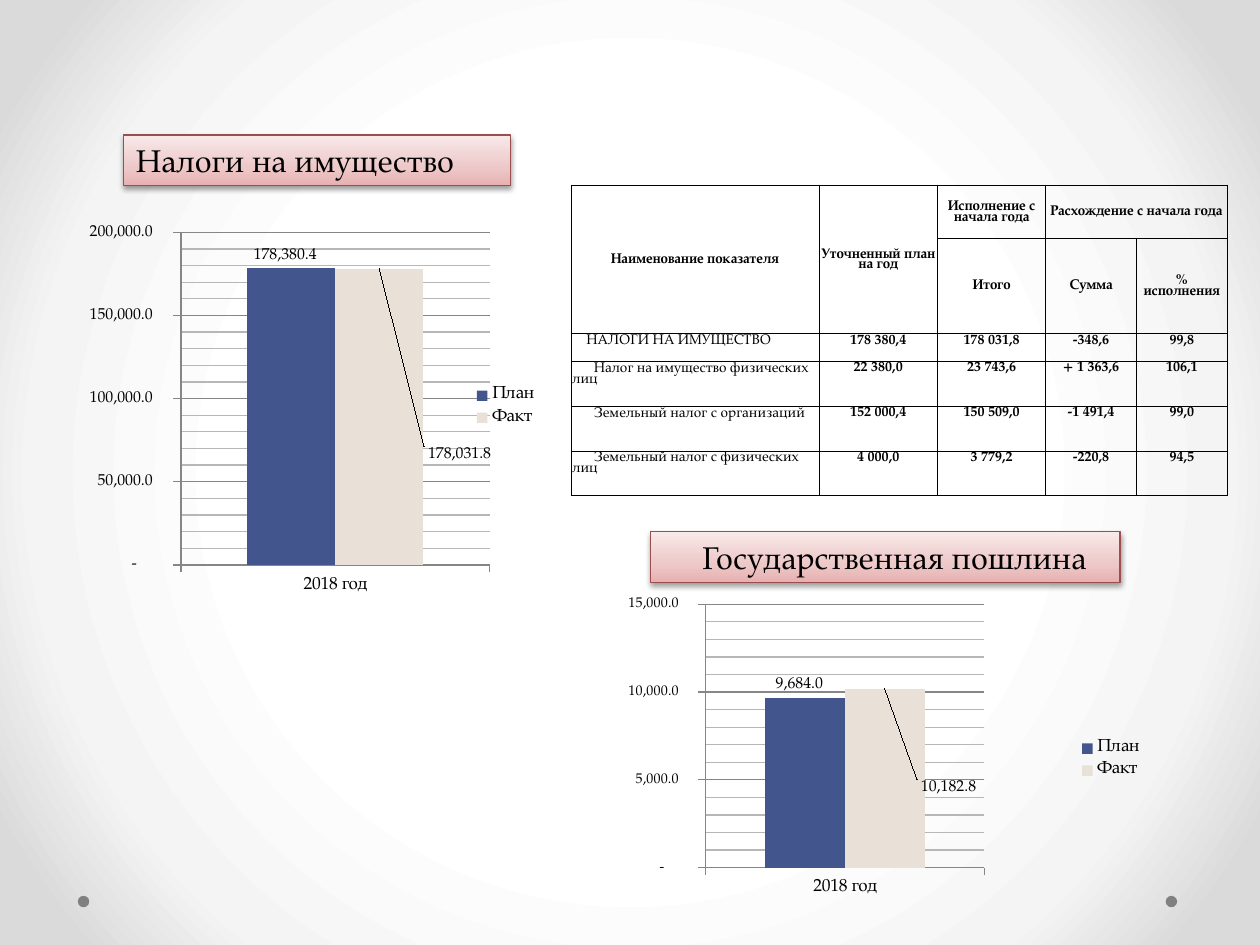
from dataclasses import dataclass
from typing import Any

from lxml.etree import SubElement
from pptx import Presentation
from pptx.chart.data import CategoryChartData
from pptx.dml.color import RGBColor
from pptx.enum.chart import XL_CHART_TYPE, XL_LABEL_POSITION, XL_LEGEND_POSITION, XL_TICK_MARK
from pptx.enum.shapes import MSO_SHAPE
from pptx.enum.text import MSO_ANCHOR, MSO_AUTO_SIZE, PP_ALIGN
from pptx.oxml import parse_xml
from pptx.oxml.ns import nsdecls, qn
from pptx.util import Cm, Pt


@dataclass(frozen=True)
class Theme:
    font: str = "TeX Gyre Pagella"
    text: str = "000000"
    dot: str = "808080"
    heading_line: str = "9A4E4E"
    axis: str = "868686"
    minor_grid: str = "B7B7B7"
    series: tuple = ("42568D", "E9E0D7")
    heading_stops: tuple = ((0, "E8B0B0"), (35, "EDC8C8"), (100, "F9E9E9"))
    back_stops: tuple = ((50, "FFFFFF"), (76, "F4F4F4"), (92, "DADADA"))
    heading_pt: float = 18
    category_pt: float = 10
    label_pt: float = 9
    table_pt: float = 8


@dataclass(frozen=True)
class BarChart:
    box: tuple          # left, top, width, height in cm
    plot: tuple         # inner plot area, as fractions of the chart
    values: tuple       # plan, fact
    top: float
    step: float
    axis_pt: float
    fact_shift: tuple   # offset of the fact label, as fractions


@dataclass(frozen=True)
class Row:
    name: str
    indent: float
    figures: tuple


T = Theme()
NUMBER = '_-* #,##0.0_р_._-;\\-* #,##0.0_р_._-;_-* "-"??_р_._-;_-@_-'

CHARTS = (
    BarChart((0.89, 4.11, 10.21, 8.18), (0.27, 0.07, 0.61, 0.82),
             (178380.4, 178031.8), 200000, 50000, 9, (0.17, 0.49)),
    BarChart((12.5, 11.91, 10.8, 6.81), (0.16, 0.04, 0.52, 0.78),
             (9684.0, 10182.8), 15000, 5000, 8, (0.13, 0.33)),
)
COLS = (5.0, 2.39, 2.18, 1.83, 1.83)
ROWS = (1.07, 1.93, 0.56, 0.91, 0.89, 0.89)
HEADS = {
    (0, 0): "Наименование показателя", (0, 1): "Уточненный план на год",
    (0, 2): "Исполнение с начала года", (0, 3): "Расхождение с начала года",
    (1, 2): "Итого", (1, 3): "Сумма", (1, 4): "% исполнения",
}
MERGES = (((0, 0), (1, 0)), ((0, 1), (1, 1)), ((0, 3), (0, 4)))
BODY = (
    Row("НАЛОГИ НА ИМУЩЕСТВО", 0.28, ("178 380,4", "178 031,8", "-348,6", "99,8")),
    Row("Налог на имущество физических лиц", 0.43, ("22 380,0", "23 743,6", "+ 1 363,6", "106,1")),
    Row("Земельный налог с организаций", 0.43, ("152 000,4", "150 509,0", "-1 491,4", "99,0")),
    Row("Земельный налог с физических лиц", 0.43, ("4 000,0", "3 779,2", "-220,8", "94,5")),
)


def rgb(color: str) -> RGBColor:
    return RGBColor.from_string(color)


def set_gradient(fill: Any, parent: Any, stops: tuple, direction: str) -> None:
    fill.solid()
    gs = "".join(f'<a:gs pos="{pos * 1000}"><a:srgbClr val="{c}"/></a:gs>' for pos, c in stops)
    grad = parse_xml(f'<a:gradFill {nsdecls("a")} rotWithShape="1">'
                     f'<a:gsLst>{gs}</a:gsLst>{direction}</a:gradFill>')
    parent.replace(parent.find(qn("a:solidFill")), grad)


def add_run(p: Any, text: str, size: float, bold: bool = False) -> None:
    r = p.add_run()
    r.text = text
    r.font.name, r.font.size, r.font.bold = T.font, Pt(size), bold
    r.font.color.rgb = rgb(T.text)


def format_heading(sp: Any, text: str, box: tuple, margin: float) -> None:
    sp.left, sp.top, sp.width, sp.height = map(Cm, box)
    set_gradient(sp.fill, sp.element.spPr, T.heading_stops, '<a:lin ang="16200000" scaled="1"/>')
    sp.line.color.rgb, sp.line.width = rgb(T.heading_line), Pt(0.75)
    sp.element.spPr.append(parse_xml(
        f'<a:effectLst {nsdecls("a")}><a:outerShdw blurRad="40000" dist="20000" dir="5400000" '
        'rotWithShape="0"><a:srgbClr val="000000"><a:alpha val="38000"/></a:srgbClr>'
        '</a:outerShdw></a:effectLst>'))
    tf = sp.text_frame
    tf.word_wrap, tf.auto_size = True, MSO_AUTO_SIZE.NONE
    tf.vertical_anchor = MSO_ANCHOR.MIDDLE
    tf.margin_left = Cm(margin)
    tf.margin_top = tf.margin_bottom = Cm(0.13)
    p = tf.paragraphs[0]
    p.alignment = PP_ALIGN.LEFT
    add_run(p, text, T.heading_pt)


def add_dot(shapes: Any, left: float) -> None:
    sp = shapes.add_shape(MSO_SHAPE.OVAL, Cm(left), Cm(18.06), Cm(0.23), Cm(0.23))
    sp.shadow.inherit = False
    sp.fill.solid()
    sp.fill.fore_color.rgb = rgb(T.dot)
    sp.line.fill.background()


def layout_xml(x: float, y: float, modes: str = "") -> Any:
    return parse_xml(f'<c:layout {nsdecls("c")}><c:manualLayout>{modes}'
                     f'<c:x val="{x}"/><c:y val="{y}"/></c:manualLayout></c:layout>')


def place_plot(chart: Any, plot: tuple) -> None:
    area = chart.element.find(".//" + qn("c:plotArea"))
    for old in area.findall(qn("c:layout")):
        area.remove(old)
    x, y, w, h = plot
    layout = layout_xml(x, y, '<c:layoutTarget val="inner"/><c:xMode val="edge"/><c:yMode val="edge"/>')
    for tag, val in (("c:w", w), ("c:h", h)):
        SubElement(layout[0], qn(tag)).set("val", str(val))
    area.insert(0, layout)


def add_bars(shapes: Any, bars: BarChart) -> None:
    data = CategoryChartData(number_format=NUMBER)
    data.categories = ["2018 год"]
    for name, value in zip(("План", "Факт"), bars.values):
        data.add_series(name, [value])
    chart = shapes.add_chart(XL_CHART_TYPE.COLUMN_CLUSTERED, *map(Cm, bars.box), data).chart
    chart.has_title = False
    chart.font.name, chart.font.size = T.font, Pt(T.heading_pt)
    chart.font.color.rgb = rgb(T.text)
    chart.has_legend = True
    chart.legend.position = XL_LEGEND_POSITION.RIGHT
    chart.legend.include_in_layout = False
    chart.legend.font.size = Pt(T.category_pt)
    place_plot(chart, bars.plot)

    # Axes and grid
    val, cat = chart.value_axis, chart.category_axis
    for axis, size in ((cat, T.category_pt), (val, bars.axis_pt)):
        axis.major_tick_mark = XL_TICK_MARK.OUTSIDE
        axis.tick_labels.font.size = Pt(size)
        axis.format.line.color.rgb = rgb(T.axis)
    val.minimum_scale, val.maximum_scale, val.major_unit = 0, bars.top, bars.step
    val.minor_unit = bars.step / 5
    val.has_major_gridlines = val.has_minor_gridlines = True
    val.major_gridlines.format.line.color.rgb = rgb(T.axis)
    chart.element.find(".//" + qn("c:minorGridlines")).append(parse_xml(
        f'<c:spPr {nsdecls("c", "a")}><a:ln><a:solidFill><a:srgbClr val="{T.minor_grid}"/>'
        '</a:solidFill></a:ln></c:spPr>'))
    val.tick_labels.number_format = NUMBER
    val.tick_labels.number_format_is_linked = False

    # Bars and their labels
    plot = chart.plots[0]
    plot.gap_width, plot.vary_by_categories = 150, False
    for series, color in zip(plot.series, T.series):
        series.format.fill.solid()
        series.format.fill.fore_color.rgb = rgb(color)
        labels = series.data_labels
        labels.show_value = True
        labels.position = XL_LABEL_POSITION.OUTSIDE_END
        labels.font.size = Pt(T.label_pt)
        labels.number_format, labels.number_format_is_linked = NUMBER, False
    fact = plot.series[1].points[0].data_label
    fact.font.size = Pt(T.label_pt)
    fact.position = XL_LABEL_POSITION.OUTSIDE_END
    label = chart.element.find(".//" + qn("c:dLbl"))
    label.insert(1, layout_xml(*bars.fact_shift))
    label.insert(2, label.makeelement(qn("c:numFmt"), {"formatCode": NUMBER, "sourceLinked": "0"}))


def fill_cell(cell: Any, text: str, align: Any, bold: bool, indent: float = 0) -> None:
    p = cell.text_frame.paragraphs[0]
    p.alignment, p.line_spacing = align, 0.8
    if indent:
        p._p.get_or_add_pPr().set("indent", str(Cm(indent)))
    add_run(p, text, T.table_pt, bold)


def add_tax_table(shapes: Any) -> None:
    tbl = shapes.add_table(len(ROWS), len(COLS), Cm(11.51), Cm(3.73),
                           Cm(sum(COLS)), Cm(sum(ROWS))).table
    tbl.first_row = tbl.horz_banding = False
    for col, width in zip(tbl.columns, COLS):
        col.width = Cm(width)
    for i, (row, height) in enumerate(zip(tbl.rows, ROWS)):
        row.height = Cm(height)
        for cell in row.cells:
            cell.margin_left = cell.margin_right = cell.margin_top = Cm(0.03)
            cell.margin_bottom = 0
            cell.vertical_anchor = MSO_ANCHOR.MIDDLE if i < 2 else MSO_ANCHOR.TOP
            cell.fill.background()
            for n, side in enumerate("LRTB"):
                cell._tc.get_or_add_tcPr().insert(n, parse_xml(
                    f'<a:ln{side} {nsdecls("a")} w="{Pt(0.5)}"><a:solidFill>'
                    f'<a:srgbClr val="{T.text}"/></a:solidFill></a:ln{side}>'))
    for start, end in MERGES:
        tbl.cell(*start).merge(tbl.cell(*end))
    for place, text in HEADS.items():
        fill_cell(tbl.cell(*place), text, PP_ALIGN.CENTER, True)
    for i, row in enumerate(BODY, 2):
        fill_cell(tbl.cell(i, 0), row.name, PP_ALIGN.LEFT, False, row.indent)
        for j, figure in enumerate(row.figures, 1):
            fill_cell(tbl.cell(i, j), figure, PP_ALIGN.CENTER, True)


def main() -> None:
    prs = Presentation()
    prs.slide_width, prs.slide_height = Cm(25.4), Cm(19.05)
    slide = prs.slides.add_slide(prs.slide_layouts[5])
    shapes = slide.shapes

    # Background and corner dots
    back = slide.background.fill
    back.solid()
    set_gradient(back, slide.element.find(".//" + qn("p:bgPr")), T.back_stops,
                 '<a:path path="circle"><a:fillToRect l="50000" t="50000" r="50000" b="50000"/></a:path>')
    for left in (1.57, 23.5):
        add_dot(shapes, left)

    # Headings, charts and table
    format_heading(shapes.title, "Налоги на имущество", (2.49, 2.72, 7.8, 1.02), 0.25)
    add_bars(shapes, CHARTS[0])
    duty = shapes.add_shape(MSO_SHAPE.RECTANGLE, 0, 0, 0, 0)
    format_heading(duty, "Государственная пошлина", (13.11, 10.72, 9.47, 1.02), 1.05)
    add_bars(shapes, CHARTS[1])
    add_tax_table(shapes)
    prs.save("out.pptx")


if __name__ == "__main__":
    main()
